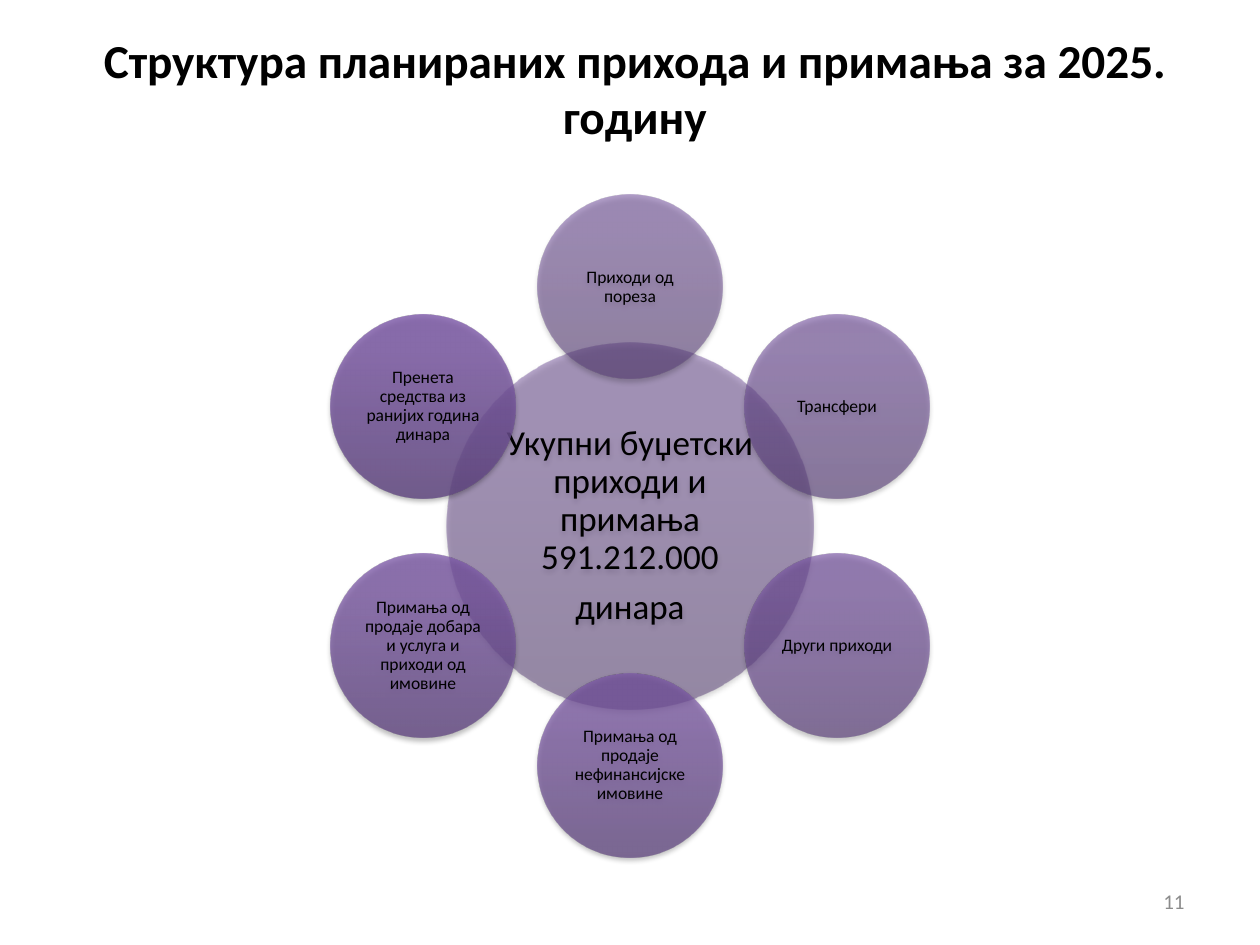
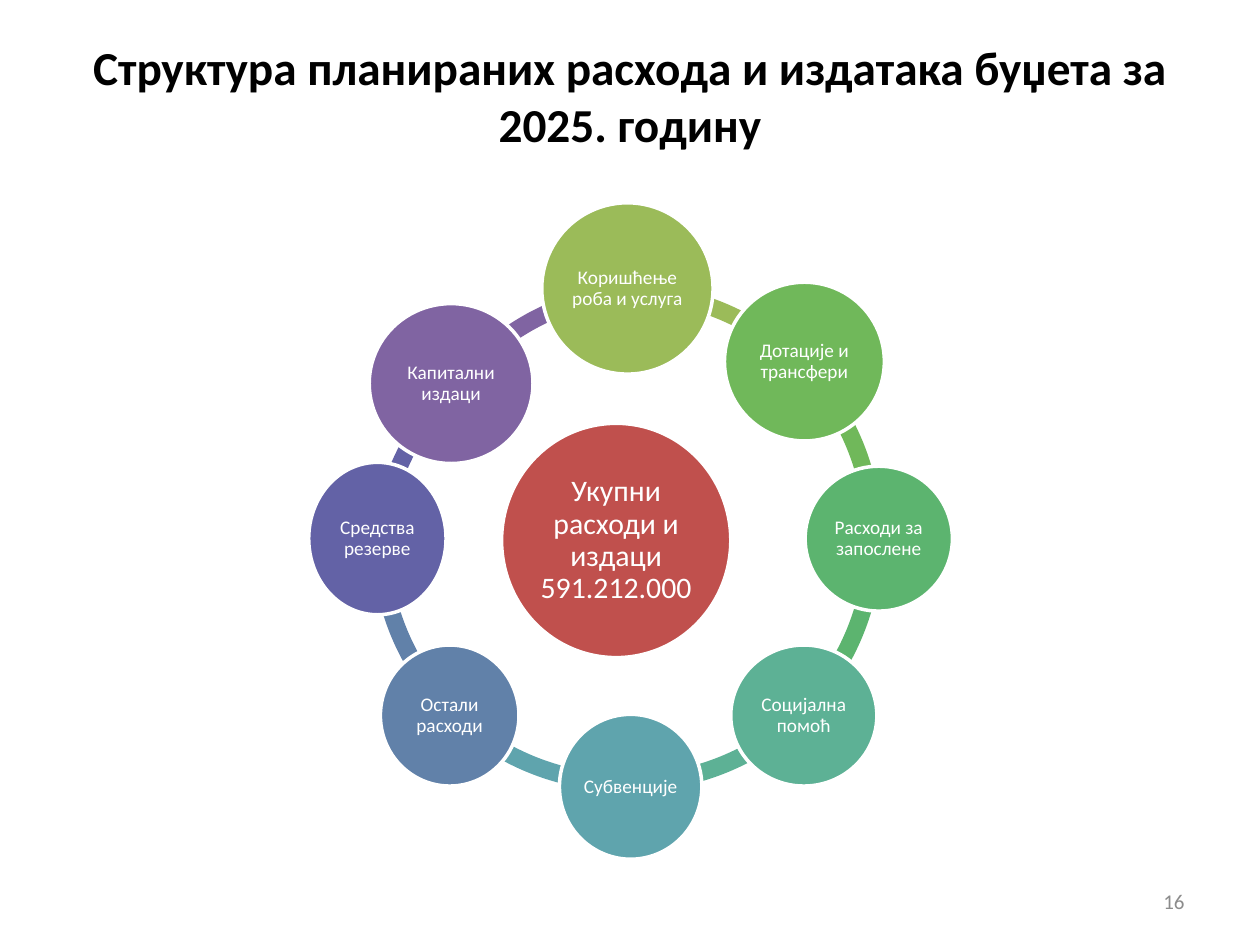
"""Builds two slides that show the structure of a municipal budget as rings of circles."""
import math
from dataclasses import dataclass

from pptx import Presentation
from pptx import util as u
from pptx.dml.color import RGBColor
from pptx.enum import shapes, text
from pptx.oxml import parse_xml
from pptx.oxml.ns import nsdecls, qn

Pt = u.Pt
FONT = "Calibri"
BLACK, WHITE, GREY, RED = "000000", "FFFFFF", "8C8C8C", "C0504D"
TITLE_SIZE, NUMBER_SIZE = 27, 12
NUMBER_FRAME = (516.2, 500.4, 167.8, 28.8)

FLOWER_CENTRE = (360, 300.6)
FLOWER_RADIUS, CORE_SIZE, PETAL_SIZE = 136.6, 209.5, 105.1
ARC_SIZE, ARC_THICKNESS = 291.6, 0.034


@dataclass(frozen=True)
class Style:
    """Look of the text in a shape."""
    size: float
    color: str
    align: text.PP_ALIGN = text.PP_ALIGN.CENTER
    bold: bool = False


@dataclass(frozen=True)
class Petal:
    """Income circle with the colours of its gradient, from bottom to top."""
    label: str
    colors: tuple[str, str, str]


@dataclass(frozen=True)
class Link:
    """Ring segment by its corner and its angles in degrees."""
    left: float
    top: float
    start: float
    end: float


@dataclass(frozen=True)
class Expense:
    """Expense circle and the ring segment that leaves it."""
    label: str
    color: str
    frame: tuple[float, float, float, float]
    link: Link


TITLE = Style(TITLE_SIZE, BLACK, bold=True)
NUMBER = Style(NUMBER_SIZE, GREY, text.PP_ALIGN.RIGHT)

INCOME_CORE = ("563D74", "705097", "704F99")
PETALS = [
    Petal("Приходи од пореза", ("583E76", "72519A", "72509C")),
    Petal("Трансфери", ("593F79", "74529D", "74519F")),
    Petal("Други приходи", ("5B407B", "7653A0", "7652A2")),
    Petal("Примања од продаје нефинансијске имовине", ("5C417D", "7854A3", "7853A5")),
    Petal("Примања од продаје добара и услуга и приходи од имовине",
          ("5E437F", "7A57A4", "7A56A7")),
    Petal("Пренета средства из ранијих година динара", ("5F4580", "7C59A6", "7C58A8")),
]

EXPENSE_CORE_FRAME = (286.6, 241.9, 131, 133.9)
EXPENSES = [
    Expense("Коришћење роба и услуга", "9BBB59", (309.6, 115.9, 97.9, 97.9),
            Link(212.4, 162, 270, 315)),
    Expense("Дотације и трансфери", "70B85A", (414, 161.3, 91.4, 90.7),
            Link(212.4, 162, 315, 0)),
    Expense("Расходи за запослене", "5CB46F", (460.1, 266.4, 84.2, 82.8),
            Link(212.4, 162, 0, 45)),
    Expense("Социјална помоћ", "5DB195", (417.6, 368.6, 83.5, 80.6),
            Link(214.6, 160.6, 45.93, 89.8)),
    Expense("Субвенције", "5FA4AD", (319.7, 408.2, 81.4, 82.8),
            Link(211, 160.6, 88.5, 134.1)),
    Expense("Остали расходи", "6181A9", (217.4, 368.6, 79.2, 80.6),
            Link(212.4, 162, 135, 180)),
    Expense("Средства резерве", "6362A6", (176.4, 264.2, 78.5, 87.1),
            Link(211.7, 176.4, 185.81, 225.94)),
    Expense("Капитални издаци", "8064A2", (211, 173.5, 93.6, 91.4),
            Link(225.4, 161.3, 217.83, 264.88)),
]


def rgb(color: str) -> RGBColor:
    """Turn a hex string into a colour."""
    return RGBColor.from_string(color)


def write(shape, lines: list[str], style: Style):
    """Write paragraphs, centred vertically, into a shape."""
    frame = shape.text_frame
    frame.word_wrap = True
    frame.vertical_anchor = text.MSO_ANCHOR.MIDDLE
    frame.text = "\n".join(lines)
    for para in frame.paragraphs:
        para.alignment = style.align
        para.font.name = FONT
        para.font.size = Pt(style.size)
        para.font.bold = style.bold
        para.font.color.rgb = rgb(style.color)


def add_text(page, frame: tuple, line: str, style: Style):
    """Add a text box of one paragraph."""
    write(page.shapes.add_textbox(*map(Pt, frame)), [line], style)


def add_page(deck, title_frame: tuple, title: str, number: str):
    """Add a blank page with its title and page number."""
    page = deck.slides.add_slide(deck.slide_layouts[6])
    add_text(page, title_frame, title, TITLE)
    add_text(page, NUMBER_FRAME, number, NUMBER)
    return page


def add_disc(page, frame: tuple, lines: list[str], style: Style, inset: float):
    """Add a circle with tightly set text."""
    disc = page.shapes.add_shape(shapes.MSO_SHAPE.OVAL, *map(Pt, frame))
    disc.shadow.inherit = False
    write(disc, lines, style)
    box = disc.text_frame
    box.margin_left = box.margin_right = box.margin_top = box.margin_bottom = Pt(inset)
    for para in box.paragraphs:
        para.line_spacing = 0.9
        para.space_after = Pt(round(0.35 * style.size, 1))
    return disc


def add_glass_disc(page, centre: tuple, size: float, lines: list[str], style: Style,
                   colors: tuple, opacity: int, inset: float):
    """Add a borderless, see-through gradient circle with a soft shadow."""
    frame = (centre[0] - size / 2, centre[1] - size / 2, size, size)
    disc = add_disc(page, frame, lines, style, inset)
    disc.line.fill.background()
    disc.fill.background()
    stops = "".join(
        f'<a:gs pos="{place * 1000}"><a:srgbClr val="{color}">'
        f'<a:alpha val="{opacity * 1000}"/></a:srgbClr></a:gs>'
        for place, color in zip((0, 80, 100), colors))
    gradient = parse_xml(
        f'<a:gradFill {nsdecls("a")} rotWithShape="1"><a:gsLst>{stops}</a:gsLst>'
        '<a:lin ang="16200000" scaled="0"/></a:gradFill>')
    shadow = parse_xml(
        f'<a:outerShdw {nsdecls("a")} blurRad="{Pt(3.1)}" dist="{Pt(1.8)}" dir="5400000" '
        'rotWithShape="0"><a:srgbClr val="000000"><a:alpha val="35000"/></a:srgbClr>'
        '</a:outerShdw>')
    properties = disc.element.spPr
    properties.replace(properties.find(qn("a:noFill")), gradient)
    properties.find(qn("a:effectLst")).append(shadow)


def add_solid_disc(page, frame: tuple, label: str, size: float, color: str):
    """Add a plain circle with a white border and white text."""
    disc = add_disc(page, frame, [label], Style(size, WHITE), 1.5)
    disc.fill.solid()
    disc.fill.fore_color.rgb = rgb(color)
    disc.line.color.rgb = rgb(WHITE)
    disc.line.width = Pt(2)


def add_link(page, link: Link, color: str):
    """Add a segment of the ring."""
    arc = page.shapes.add_shape(shapes.MSO_SHAPE.BLOCK_ARC, Pt(link.left), Pt(link.top),
                                Pt(ARC_SIZE), Pt(ARC_SIZE))
    arc.shadow.inherit = False
    for index, value in enumerate((link.start * 0.6, link.end * 0.6, ARC_THICKNESS)):
        arc.adjustments[index] = value
    arc.fill.solid()
    arc.fill.fore_color.rgb = rgb(color)
    arc.line.fill.background()


def build_income(deck):
    """Build the page of planned income."""
    page = add_page(deck, (38.9, 19.4, 648, 61.2),
                    "Структура планираних прихода и примања за 2025. годину", "11")
    add_glass_disc(page, FLOWER_CENTRE, CORE_SIZE,
                   ["Укупни буџетски приходи и примања 591.212.000", "динара"],
                   Style(20, BLACK), INCOME_CORE, 50, 2)
    for index, petal in enumerate(PETALS):
        angle = math.radians(360 / len(PETALS) * index - 90)
        centre = (FLOWER_CENTRE[0] + FLOWER_RADIUS * math.cos(angle),
                  FLOWER_CENTRE[1] + FLOWER_RADIUS * math.sin(angle))
        add_glass_disc(page, centre, PETAL_SIZE, [petal.label], Style(10, BLACK),
                       petal.colors, 55 + 5 * index, 1)


def build_expenses(deck):
    """Build the page of planned expenses."""
    page = add_page(deck, (36, 20.9, 648, 67),
                    "Структура планираних расхода и издатака буџета за 2025. годину", "16")
    for expense in reversed(EXPENSES):
        add_link(page, expense.link, expense.color)
    add_solid_disc(page, EXPENSE_CORE_FRAME, "Укупни расходи и издаци 591.212.000", 17, RED)
    for expense in EXPENSES:
        add_solid_disc(page, expense.frame, expense.label, 11, expense.color)


def main():
    """Build and save the deck."""
    deck = Presentation()
    deck.slide_width, deck.slide_height = Pt(720), Pt(540)
    build_income(deck)
    build_expenses(deck)
    deck.save("out.pptx")


if __name__ == "__main__":
    main()
